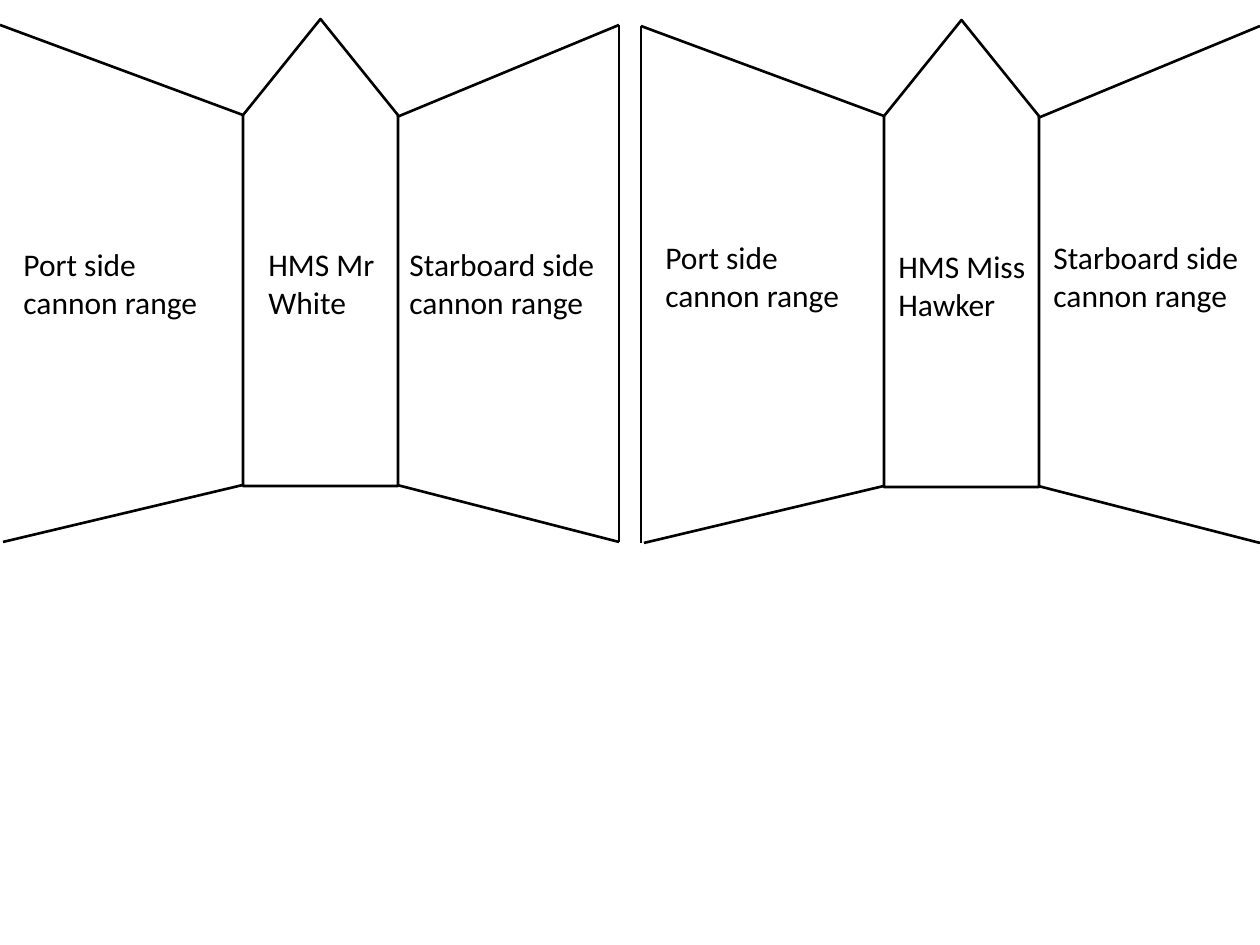
import collections
import lxml.etree
import pptx
import pptx.dml.color
import pptx.enum.shapes
import pptx.enum.text
import pptx.oxml.ns
import pptx.util

Theme = collections.namedtuple("Theme", "ink font size line")
theme = Theme(pptx.dml.color.RGBColor(0, 0, 0), "Calibri", pptx.util.Pt(18), pptx.util.Pt(1.5))
PX = pptx.util.Inches(1) // 126

deck = pptx.Presentation()
deck.slide_width, deck.slide_height = 1260 * PX, 945 * PX
slide = deck.slides.add_slide(deck.slide_layouts[6])


def label(text, left, top, width, height=89, size=theme.size, color=theme.ink):
    box = slide.shapes.add_textbox(left * PX, top * PX, width * PX, height * PX)
    frame = box.text_frame
    frame.word_wrap = True
    frame.auto_size = pptx.enum.text.MSO_AUTO_SIZE.SHAPE_TO_FIT_TEXT
    run = frame.paragraphs[0].add_run()
    run.text = text
    run.font.name, run.font.size = theme.font, size
    run.font.color.rgb = color


def edge(start, end):
    line = slide.shapes.add_connector(
        pptx.enum.shapes.MSO_CONNECTOR.STRAIGHT, *(n * PX for n in (*start, *end)))
    line.line.color.rgb = theme.ink
    line.line.width = theme.line
    lxml.etree.SubElement(line._element.spPr, pptx.oxml.ns.qn("a:effectLst"))


walls = [
    ((243, 115), (0, 25)),
    ((243, 485), (3, 542)),
    ((397, 117), (619, 25)),
    ((397, 485), (619, 542)),
]
ships = [
    (641, 1, 0, [
        ("Starboard side cannon range", 1041, 232, 219),
        ("Port side cannon range", 653, 232, 209),
        ("HMS Miss Hawker", 886, 241, 152),
    ]),
    (0, 0, 619, [
        ("Starboard side cannon range", 397, 239, 222),
        ("Port side cannon range", 11, 239, 209),
        ("HMS Mr White", 256, 239, 141),
    ]),
]

for dx, dy, side, labels in ships:
    hull = slide.shapes.add_shape(
        pptx.enum.shapes.MSO_SHAPE.PENTAGON,
        (87 + dx) * PX, (175 + dy) * PX, 467 * PX, 155 * PX)
    hull.rotation = 270
    hull.adjustments[0] = 0.62
    hull.shadow.inherit = False
    hull.fill.background()
    hull.line.color.rgb = theme.ink
    hull.line.width = theme.line
    for ends in walls + [((side, 25), (side, 542))]:
        edge(*((x + dx, y + dy) for x, y in ends))
    for text, left, top, width in labels:
        label(text, left, top, width)

deck.save("out.pptx")
